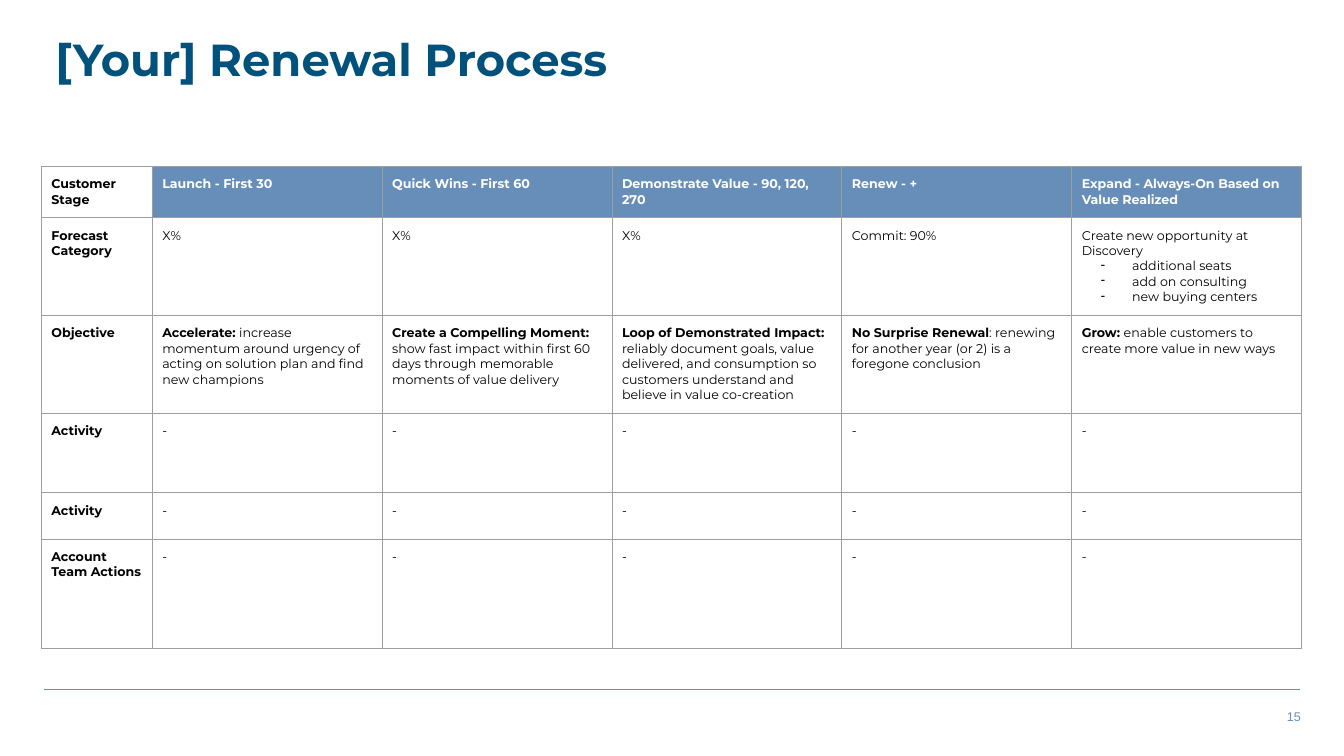
from dataclasses import dataclass

from lxml.etree import SubElement
from pptx import Presentation
from pptx.dml.color import RGBColor
from pptx.enum.shapes import MSO_CONNECTOR
from pptx.enum.text import MSO_ANCHOR, PP_ALIGN
from pptx.oxml.ns import qn
from pptx.util import Inches, Pt


@dataclass(frozen=True)
class Theme:
    """Colours, fonts and type sizes of the slide."""
    navy: str = "00517C"
    blue: str = "668EB9"
    grid: str = "9E9E9E"
    black: str = "000000"
    white: str = "FFFFFF"
    font: str = "Montserrat"
    number_font: str = "Arial"
    title_size: int = 32
    small_size: int = 9


THEME = Theme()
COLUMN_WIDTHS = [1.1] + [2.28] * 5
ROW_HEIGHTS = [0.51, 0.97, 0.97, 0.79, 0.46, 1.08]
STAGES = ["Launch - First 30", "Quick Wins - First 60",
          "Demonstrate Value - 90, 120, 270", "Renew - +",
          "Expand - Always-On Based on Value Realized"]
FORECASTS = ["X%", "X%", "X%", "Commit: 90%", "Create new opportunity at Discovery"]
EXPANSIONS = ["additional seats", "add on consulting", "new buying centers"]
OBJECTIVES = [
    ("Accelerate: ", "increase momentum around urgency of acting on solution plan "
     "and find new champions"),
    ("Create a Compelling Moment: ", "show fast impact within first 60 days through "
     "memorable moments of value delivery"),
    ("Loop of Demonstrated Impact: ", "reliably document goals, value delivered, and "
     "consumption so customers understand and believe in value co-creation"),
    ("No Surprise Renewal", ": renewing for another year (or 2) is a foregone conclusion"),
    ("Grow: ", "enable customers to create more value in new ways"),
]


def bold(texts):
    """Turn texts into pairs of a bold lead and an empty plain rest."""
    return [(text, "") for text in texts]


def plain(texts):
    """Turn texts into pairs of an empty bold lead and a plain rest."""
    return [("", text) for text in texts]


def add_span(para, text, size, color, font=THEME.font, strong=False):
    """Add one formatted run to a paragraph."""
    span = para.add_run()
    span.text = text
    span.font.name = font
    span.font.size = Pt(size)
    span.font.bold = strong
    span.font.color.rgb = RGBColor.from_string(color)


def add_text_box(page, left, top, width, height, anchor=MSO_ANCHOR.TOP):
    """Add a wrapping text box and return its first paragraph."""
    box = page.shapes.add_textbox(Inches(left), Inches(top), Inches(width), Inches(height))
    box.text_frame.word_wrap = True
    box.text_frame.vertical_anchor = anchor
    return box.text_frame.paragraphs[0]


def add_rule(page, left, right, top):
    """Add the horizontal footer line."""
    rule = page.shapes.add_connector(MSO_CONNECTOR.STRAIGHT, Inches(left), Inches(top),
                                     Inches(right), Inches(top))
    rule.line.color.rgb = RGBColor.from_string(THEME.blue)
    rule.line.width = Pt(1)
    SubElement(rule.element.spPr, qn("a:effectLst"))


def add_borders(cell):
    """Draw a thin grey line on each side of a cell."""
    properties = cell._tc.get_or_add_tcPr()
    for position, side in enumerate(("a:lnL", "a:lnR", "a:lnT", "a:lnB")):
        line = properties.makeelement(qn(side), {"w": str(Pt(0.75))})
        fill = SubElement(line, qn("a:solidFill"))
        SubElement(fill, qn("a:srgbClr"), val=THEME.grid)
        properties.insert(position, line)


def add_bullet(cell, text):
    """Append a dash bullet to a cell."""
    para = cell.text_frame.add_paragraph()
    properties = para._p.get_or_add_pPr()
    properties.set("marL", str(Inches(0.5)))
    properties.set("indent", str(Inches(-0.31)))
    color = SubElement(properties, qn("a:buClr"))
    SubElement(color, qn("a:srgbClr"), val=THEME.black)
    SubElement(properties, qn("a:buChar"), char="-")
    add_span(para, text, THEME.small_size, THEME.black)


def fill_cell(cell, content, text_color, fill_color):
    """Set the fill, margins, borders and text of a cell."""
    cell.fill.solid()
    cell.fill.fore_color.rgb = RGBColor.from_string(fill_color)
    cell.margin_left = cell.margin_right = Inches(0.1)
    cell.margin_top = cell.margin_bottom = Inches(0.1)
    add_borders(cell)
    para = cell.text_frame.paragraphs[0]
    for text, strong in zip(content, (True, False)):
        if text:
            add_span(para, text, THEME.small_size, text_color, strong=strong)


def add_process_table(page, left, top, rows):
    """Add the stage table and return it."""
    frame = page.shapes.add_table(len(rows), len(COLUMN_WIDTHS), Inches(left), Inches(top),
                                  Inches(sum(COLUMN_WIDTHS)), Inches(sum(ROW_HEIGHTS)))
    table = frame.table
    table.horz_banding = False
    for column, width in zip(table.columns, COLUMN_WIDTHS):
        column.width = Inches(width)
    for row, height in zip(table.rows, ROW_HEIGHTS):
        row.height = Inches(height)
    for row_index, contents in enumerate(rows):
        for column_index, content in enumerate(contents):
            is_stage = row_index == 0 and column_index > 0
            colors = (THEME.white, THEME.blue) if is_stage else (THEME.black, THEME.white)
            fill_cell(table.cell(row_index, column_index), content, *colors)
    return table


def main():
    """Build the renewal process slide."""
    deck = Presentation()
    deck.slide_width, deck.slide_height = Inches(13.33), Inches(7.5)
    page = deck.slides.add_slide(deck.slide_layouts[6])

    add_rule(page, 0.44, 12.89, 6.84)
    number = add_text_box(page, 7.67, 6.98, 5.33, 0.25, MSO_ANCHOR.MIDDLE)
    number.alignment = PP_ALIGN.RIGHT
    add_span(number, "15", THEME.small_size, THEME.blue, THEME.number_font)

    title = add_text_box(page, 0.45, 0.33, 8.52, 0.76)
    title.line_spacing = 0.9
    add_span(title, "[Your] Renewal Process", THEME.title_size, THEME.navy, strong=True)

    headings = bold(["Customer Stage", "Forecast Category", "Objective",
                     "Activity", "Activity", "Account Team Actions"])
    open_items = plain(["-"] * len(STAGES))
    bodies = [bold(STAGES), plain(FORECASTS), OBJECTIVES] + [open_items] * 3
    rows = [[heading] + body for heading, body in zip(headings, bodies)]
    table = add_process_table(page, 0.41, 1.65, rows)
    for expansion in EXPANSIONS:
        add_bullet(table.cell(1, len(STAGES)), expansion)

    deck.save("out.pptx")


if __name__ == "__main__":
    main()
